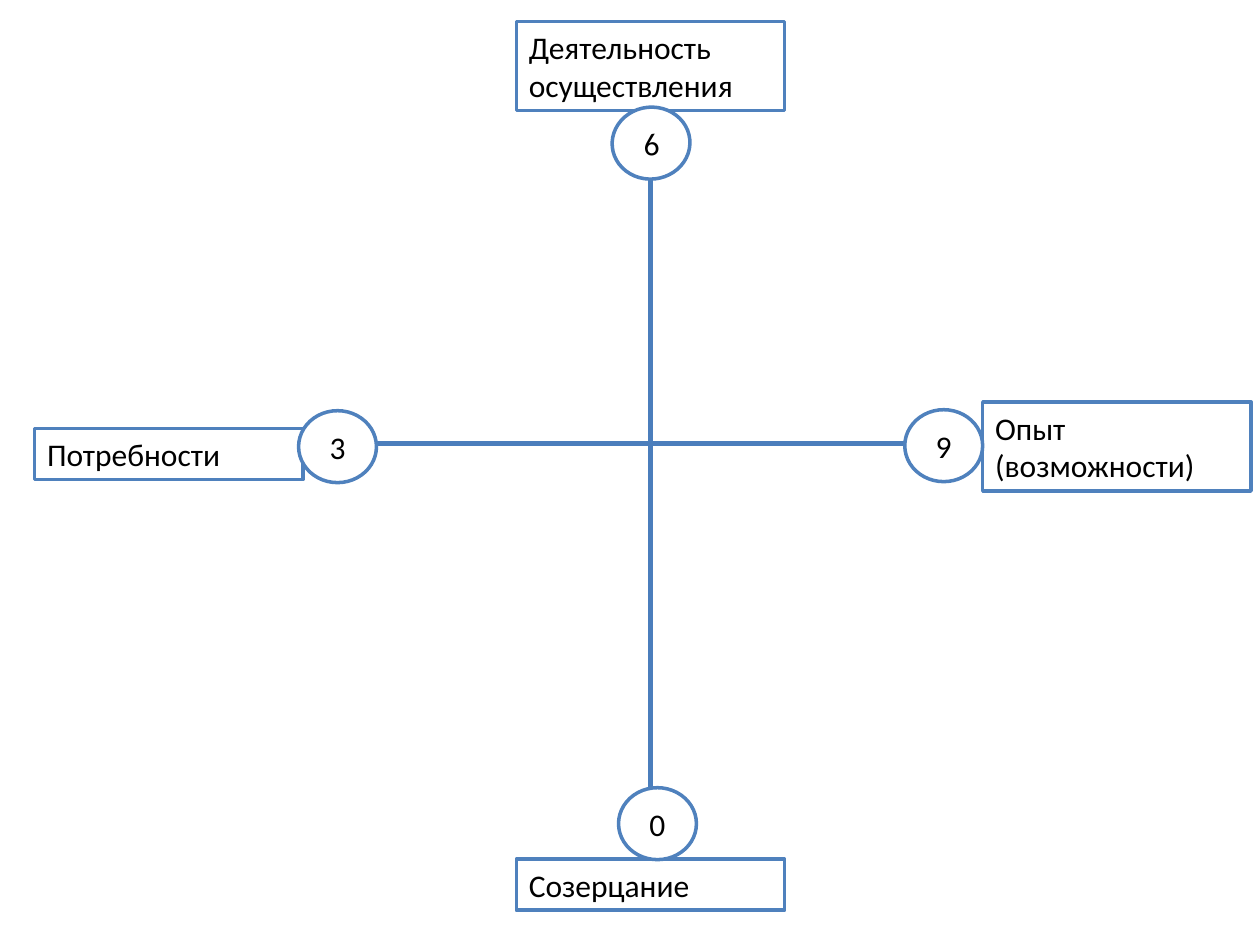
"""Build a slide with a cross of two axes whose four ends are numbered and labelled."""
from lxml.etree import SubElement
from pptx import Presentation
from pptx.dml.color import RGBColor
from pptx.enum.shapes import MSO_CONNECTOR, MSO_SHAPE
from pptx.enum.text import MSO_ANCHOR, PP_ALIGN
from pptx.oxml.ns import qn
from pptx.util import Cm, Pt

COLORS = {"paper": "FFFFFF", "outline": "4F81BD", "axis": "4B7EBC", "text": "000000"}
LABEL_WIDTH = 5.41
NODE_WIDTH, NODE_HEIGHT = 1.57, 1.45


def add_block(slide, kind, text, left, top, width, height, align):
    block = slide.shapes.add_shape(kind, Cm(left), Cm(top), Cm(width), Cm(height))
    block.shadow.inherit = False
    block.fill.solid()
    block.fill.fore_color.rgb = RGBColor.from_string(COLORS["paper"])
    block.line.color.rgb = RGBColor.from_string(COLORS["outline"])
    block.line.width = Pt(2)
    frame = block.text_frame
    frame.word_wrap = True
    frame.vertical_anchor = MSO_ANCHOR.MIDDLE
    paragraph = frame.paragraphs[0]
    paragraph.text = text
    paragraph.alignment = align
    paragraph.font.name = "Calibri"
    paragraph.font.size = Pt(18)
    paragraph.font.color.rgb = RGBColor.from_string(COLORS["text"])
    return block


prs = Presentation()
prs.slide_width, prs.slide_height = Cm(25.4), Cm(19.05)
slide = prs.slides.add_slide(prs.slide_layouts[6])

labels = [
    ("Деятельность осуществления", 10.41, 0.43, 1.8),
    ("Опыт (возможности)", 19.81, 8.1, 1.8),
    ("Созерцание", 10.41, 17.32, 1.03),
    ("Потребности", 0.7, 8.64, 1.03),
]
for label, left, top, height in labels:
    add_block(slide, MSO_SHAPE.RECTANGLE, label, left, top, LABEL_WIDTH, height, PP_ALIGN.LEFT)

axes = [(13.12, 2.36, 13.12, 17.32), (6.3, 8.94, 19.3, 8.94)]
for ends in axes:
    axis = slide.shapes.add_connector(MSO_CONNECTOR.STRAIGHT, *map(Cm, ends))
    axis.line.color.rgb = RGBColor.from_string(COLORS["axis"])
    axis.line.width = Pt(3)
    SubElement(axis._element.spPr, qn("a:effectLst"))

nodes = [
    ("9", 18.24, 8.26, 0),
    ("6", 12.34, 2.16, 354.5),
    ("3", 6.02, 8.28, 0),
    ("0", 12.47, 15.88, 0),
]
for number, left, top, rotation in nodes:
    node = add_block(slide, MSO_SHAPE.OVAL, number, left, top, NODE_WIDTH, NODE_HEIGHT, PP_ALIGN.CENTER)
    node.rotation = rotation

prs.save("out.pptx")
